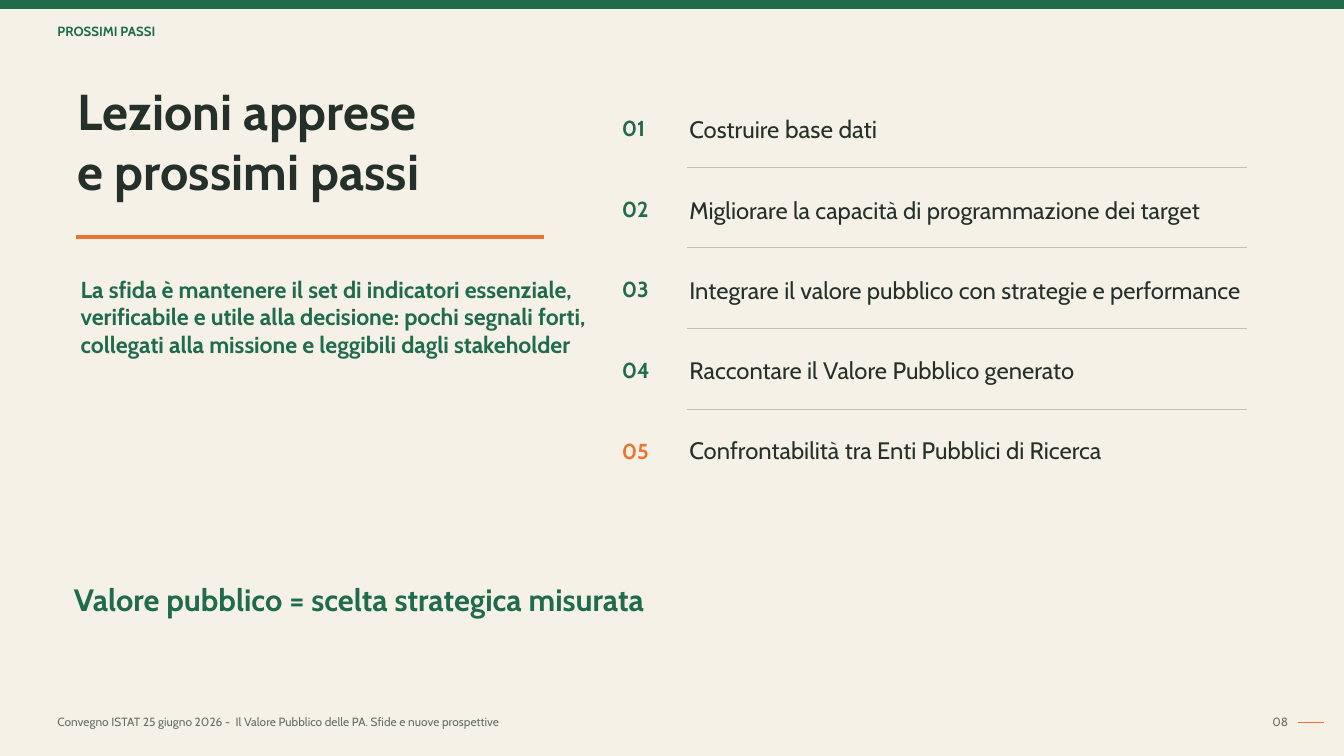
from pptx import Presentation
from pptx.dml.color import RGBColor
from pptx.enum.shapes import MSO_CONNECTOR as Connector, MSO_SHAPE as Shape
from pptx.enum.text import MSO_ANCHOR as Anchor, MSO_AUTO_SIZE as AutoSize, PP_ALIGN as Align
from pptx.oxml.ns import qn
from pptx.util import Pt
from lxml.etree import SubElement

CREAM = RGBColor(0xF6, 0xF1, 0xE7)
GREEN = RGBColor(0x1F, 0x6B, 0x4C)
ORANGE = RGBColor(0xE8, 0x75, 0x31)
INK = RGBColor(0x24, 0x30, 0x29)
GREY = RGBColor(0x64, 0x70, 0x64)
SAGE = RGBColor(0xB8, 0xC5, 0xB5)

STEPS = [
    "Costruire",
    "Migliorare la capacità di programmazione dei target",
    "Integrare il valore pubblico con strategie e performance",
    "Raccontare il Valore Pubblico generato",
    "Confrontabilità tra Enti Pubblici di Ricerca",
]
STEP_PITCH = 57.6
STEP_GAP = 36.9


class SlideBuilder:
    font = "Cabin"

    def __init__(self, slide):
        self.slide = slide
        slide.background.fill.solid()
        slide.background.fill.fore_color.rgb = CREAM

    def fill_box(self, box, text, place, size, color, bold=False, align=Align.LEFT, gap=0):
        box.left, box.top, box.width, box.height = map(Pt, place)
        frame = box.text_frame
        frame.text = text
        frame.word_wrap = True
        frame.auto_size = AutoSize.NONE
        frame.vertical_anchor = Anchor.TOP
        frame.margin_left = frame.margin_right = Pt(1.44)
        frame.margin_top = frame.margin_bottom = Pt(0.72)
        for number, paragraph in enumerate(frame.paragraphs):
            paragraph.alignment = align
            paragraph.space_before = Pt(gap if number else 0)
            for run in paragraph.runs:
                self.style(run.font, size, color, bold)
        return frame

    def style(self, font, size, color, bold=False):
        font.name = self.font
        font.size = Pt(size)
        font.bold = bold
        font.color.rgb = color

    def text(self, text, place, size, color, bold=False, align=Align.LEFT):
        box = self.slide.shapes.add_textbox(*map(Pt, place))
        self.fill_box(box, text, place, size, color, bold, align)

    def title(self, text, place, size, color):
        self.fill_box(self.slide.shapes.title, text, place, size, color, bold=True)

    def steps(self, items, place, size, color, gap):
        frame = self.fill_box(self.slide.placeholders[1], "\n".join(items), place, size, color, gap=gap)
        for paragraph in frame.paragraphs:
            properties = paragraph._p.get_or_add_pPr()
            properties.set("marL", "0")
            properties.set("indent", "0")
            SubElement(properties, qn("a:buNone"))
        return frame

    def bar(self, place, color):
        bar = self.slide.shapes.add_shape(Shape.RECTANGLE, *map(Pt, place))
        bar.shadow.inherit = False
        bar.fill.solid()
        bar.fill.fore_color.rgb = color
        bar.line.color.rgb = color
        bar.line.width = Pt(1)

    def rule(self, left, right, y, color, width):
        rule = self.slide.shapes.add_connector(Connector.STRAIGHT, Pt(left), Pt(y), Pt(right), Pt(y))
        rule.line.color.rgb = color
        rule.line.width = Pt(width)
        SubElement(rule._element.spPr, qn("a:effectLst"))


def main():
    deck = Presentation()
    deck.slide_width, deck.slide_height = Pt(960), Pt(540)
    page = SlideBuilder(deck.slides.add_slide(deck.slide_layouts[1]))

    page.bar((0, 0, 960, 6), GREEN)
    page.text("PROSSIMI PASSI", (39.6, 15.8, 238, 17), 9.5, GREEN, bold=True)
    page.title("Lezioni apprese\ne prossimi passi", (54, 56.2, 389, 88), 36, INK)
    page.rule(54, 388.8, 169.2, ORANGE, 3)
    page.text(
        "La sfida è mantenere il set di indicatori essenziale, verificabile e utile alla decisione: "
        "pochi segnali forti, collegati alla missione e leggibili dagli stakeholder",
        (56.2, 195.8, 371, 107), 16.5, GREEN, bold=True)

    steps = page.steps(STEPS, (491, 81, 416, 270), 17, INK, STEP_GAP)
    data_base = steps.paragraphs[0].add_run()
    data_base.text = " base dati"
    page.style(data_base.font, 17.5, INK)
    for index in range(len(STEPS)):
        last = index == len(STEPS) - 1
        offset = index * STEP_PITCH
        page.text(f"{index + 1:02}", (442.8, 81.4 + offset, 37.4, 21.6), 15.5,
                  ORANGE if last else GREEN, bold=True)
        if not last:
            page.rule(491, 890.6, 119.5 + offset, SAGE, 0.75)

    page.text("Valore pubblico = scelta strategica misurata", (18.7, 414, 442.8, 31.7), 22, GREEN,
              bold=True, align=Align.RIGHT)
    page.text("Convegno ISTAT 25 giugno 2026 -  Il Valore Pubblico delle PA. Sfide e nuove prospettive",
              (39.6, 509.8, 785, 15.8), 8.5, GREY)
    page.text("08", (891.4, 509.8, 30.2, 15.8), 8.5, GREY, align=Align.RIGHT)
    page.rule(927.4, 945.4, 516.2, ORANGE, 1.2)

    deck.save("out.pptx")


if __name__ == "__main__":
    main()
